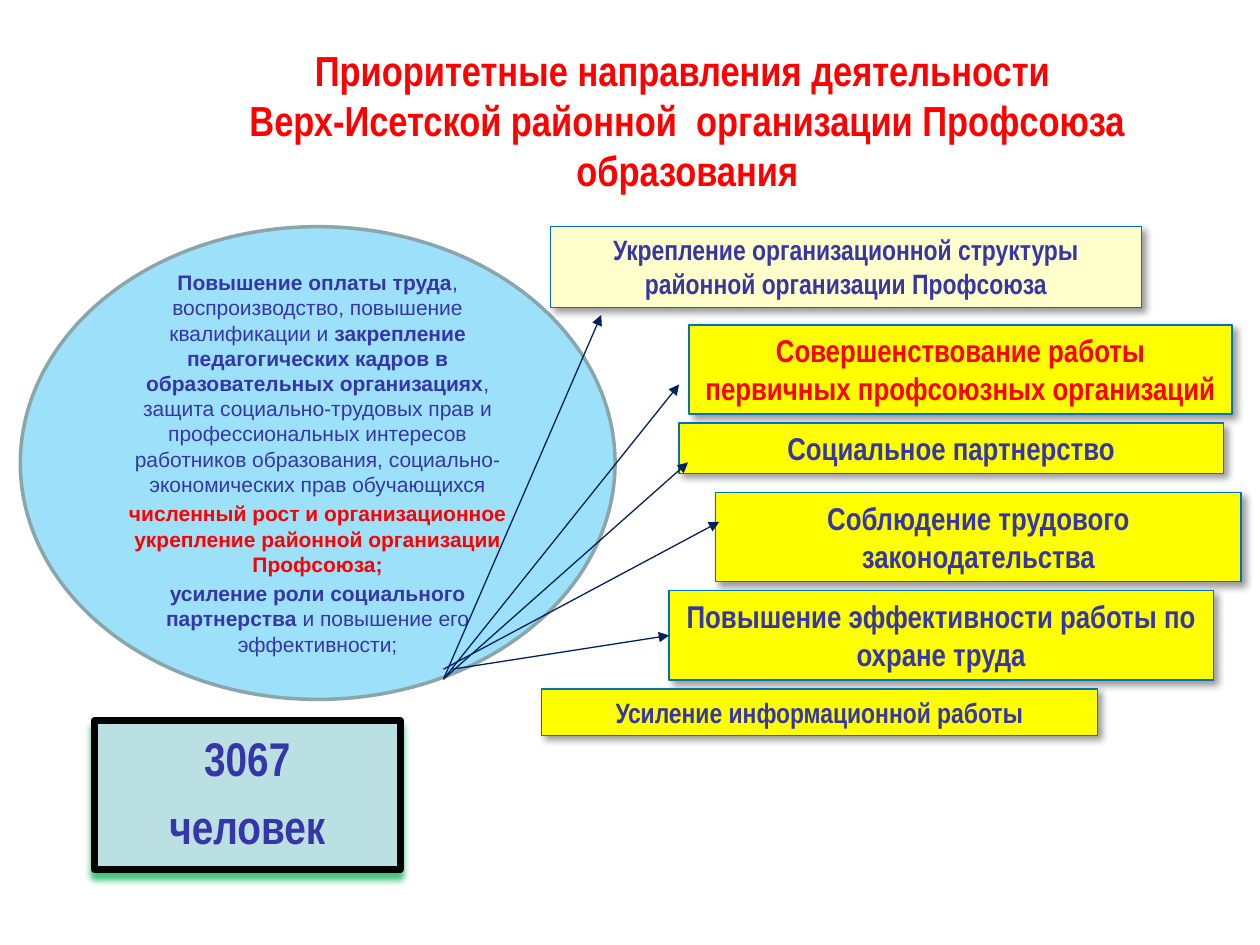
from lxml.etree import SubElement
from pptx import Presentation
from pptx.dml.color import RGBColor
from pptx.enum.shapes import MSO_CONNECTOR, MSO_SHAPE
from pptx.enum.text import MSO_ANCHOR, MSO_AUTO_SIZE, PP_ALIGN
from pptx.oxml.ns import qn
from pptx.util import Cm, Pt

BLUE, RED, YELLOW = "3636A8", "FF0000", "FFFF00"
NARROW = "Arial Narrow"

TITLE = ("Приоритетные направления деятельности \v"
         "Верх-Исетской районной  организации Профсоюза образования")

# Each goal: colour, then runs of (text, bold)
GOALS = [
    (BLUE, [
        ("Повышение оплаты труда", True),
        (", воспроизводство, повышение квалификации и ", False),
        ("закрепление педагогических кадров в образовательных организациях", True),
        (", защита социально-трудовых прав и профессиональных интересов "
         "работников образования, социально-экономических прав обучающихся", False),
    ]),
    (RED, [("численный рост и организационное укрепление районной "
            "организации Профсоюза;", True)]),
    (BLUE, [
        ("усиление роли социального партнерства ", True),
        ("и повышение его эффективности;", False),
    ]),
]

# Text, place in cm, size, fill, text colour
TASKS = [
    ("Укрепление организационной структуры районной организации Профсоюза",
     (11.1, 4.57, 11.91, 1.63), 16, "FFFFCC", BLUE),
    ("Совершенствование работы первичных профсоюзных организаций",
     (13.89, 6.55, 10.95, 1.8), 18, YELLOW, RED),
    ("Социальное партнерство", (13.69, 8.53, 10.97, 1.02), 18, YELLOW, BLUE),
    ("Соблюдение трудового законодательства",
     (14.43, 9.93, 10.59, 1.8), 18, YELLOW, BLUE),
    ("Повышение эффективности работы по охране труда",
     (13.49, 11.91, 10.97, 1.8), 18, YELLOW, BLUE),
    ("Усиление информационной работы", (10.92, 13.89, 11.2, 0.94), 16, YELLOW, BLUE),
]
SAFETY = 4  # the task whose left side an arrow is joined to

ARROWS = [
    ((8.94, 13.69), (12.12, 6.35)),
    ((8.94, 13.69), (13.69, 7.75)),
    ((8.94, 13.69), (13.87, 9.32)),
    ((8.94, 13.49), (14.5, 10.52)),
    ((9.12, 13.49), (13.49, 12.81)),
]

MEMBERS = ["3067", "человек"]


def rgb(code):
    return RGBColor.from_string(code)


def place(shape, box):
    shape.left, shape.top, shape.width, shape.height = map(Cm, box)


def paint(shape, fill, line, width):
    shape.fill.solid()
    shape.fill.fore_color.rgb = rgb(fill)
    shape.line.color.rgb = rgb(line)
    shape.line.width = Pt(width)


def style(para, size, colour, name=NARROW, bold=True):
    para.alignment = PP_ALIGN.CENTER
    font = para.font
    font.name, font.size, font.bold = name, Pt(size), bold
    font.color.rgb = rgb(colour)


def shade(shape, colour, alpha, blur, dist, angle):
    """Give the shape an outer shadow; alpha in percent, angle in degrees."""
    shape.shadow.inherit = False
    effects = shape._element.spPr.find(qn("a:effectLst"))
    outer = SubElement(effects, qn("a:outerShdw"), blurRad=str(Pt(blur)),
                       dist=str(Pt(dist)), dir=str(angle * 60000),
                       algn="tl", rotWithShape="0")
    tint = SubElement(outer, qn("a:srgbClr"), val=colour)
    SubElement(tint, qn("a:alpha"), val=str(alpha * 1000))


def add_box(slide, box):
    return slide.shapes.add_shape(MSO_SHAPE.RECTANGLE, *map(Cm, box))


def add_title(slide):
    title = slide.shapes.title
    place(title, (3.58, 0.76, 20.55, 3.18))
    frame = title.text_frame
    frame.text = TITLE
    frame.vertical_anchor = MSO_ANCHOR.TOP
    frame.auto_size = MSO_AUTO_SIZE.NONE
    style(frame.paragraphs[0], 24, RED)


def add_goals(slide):
    body = slide.placeholders[1]
    place(body, (0.41, 4.57, 11.99, 9.53))
    shape = SubElement(body._element.spPr, qn("a:prstGeom"), prst="ellipse")
    SubElement(shape, qn("a:avLst"))
    paint(body, "00B0F0", "8AA6A8", 2)
    tint = body._element.spPr.find(qn("a:solidFill"))[0]
    SubElement(tint, qn("a:alpha"), val="39000")

    frame = body.text_frame
    frame.vertical_anchor = MSO_ANCHOR.MIDDLE
    frame.auto_size = MSO_AUTO_SIZE.NONE
    for i, (colour, runs) in enumerate(GOALS):
        para = frame.add_paragraph() if i else frame.paragraphs[0]
        props = para._p.get_or_add_pPr()
        props.set("marL", "0")
        props.set("indent", "0")
        SubElement(props, qn("a:buNone"))
        para.space_before = Pt(2.4 if i else 0)
        style(para, 12, colour, "Arial", False)
        for text, bold in runs:
            run = para.add_run()
            run.text = text
            run.font.bold = bold


def add_task(slide, text, box, size, fill, colour):
    task = add_box(slide, box)
    paint(task, fill, "0070C0", 0.75)
    shade(task, "000000", 40, 4, 3, 45)
    frame = task.text_frame
    frame.word_wrap = True
    frame.text = text
    frame.vertical_anchor = MSO_ANCHOR.TOP
    style(frame.paragraphs[0], size, colour)
    return task


def add_members(slide):
    card = add_box(slide, (1.9, 14.53, 6.17, 3))
    paint(card, "BBE0E3", "000000", 4)
    SubElement(card.line._get_or_add_ln(), qn("a:round"))
    shade(card, "00B050", 74, 4, 4, 90)
    frame = card.text_frame
    frame.word_wrap = True
    frame.text = "\n".join(MEMBERS)
    frame.vertical_anchor = MSO_ANCHOR.MIDDLE
    for para in frame.paragraphs:
        para.line_spacing = 0.9
        para.space_after = Pt(9.5)
        style(para, 27, BLUE)


def add_arrow(slide, start, end):
    arrow = slide.shapes.add_connector(MSO_CONNECTOR.STRAIGHT, *map(Cm, start + end))
    arrow.line.color.rgb = rgb("002060")
    arrow.line.width = Pt(0.75)
    SubElement(arrow.line._get_or_add_ln(), qn("a:tailEnd"), type="triangle")
    SubElement(arrow._element.spPr, qn("a:effectLst"))
    return arrow


def main():
    deck = Presentation()
    deck.slide_width, deck.slide_height = Cm(25.4), Cm(19.05)
    slide = deck.slides.add_slide(deck.slide_layouts[1])
    add_title(slide)
    add_goals(slide)
    tasks = [add_task(slide, *task) for task in TASKS]
    add_members(slide)
    arrows = [add_arrow(slide, *ends) for ends in ARROWS]
    arrows[-1].end_connect(tasks[SAFETY], 1)
    deck.save("out.pptx")


if __name__ == "__main__":
    main()
